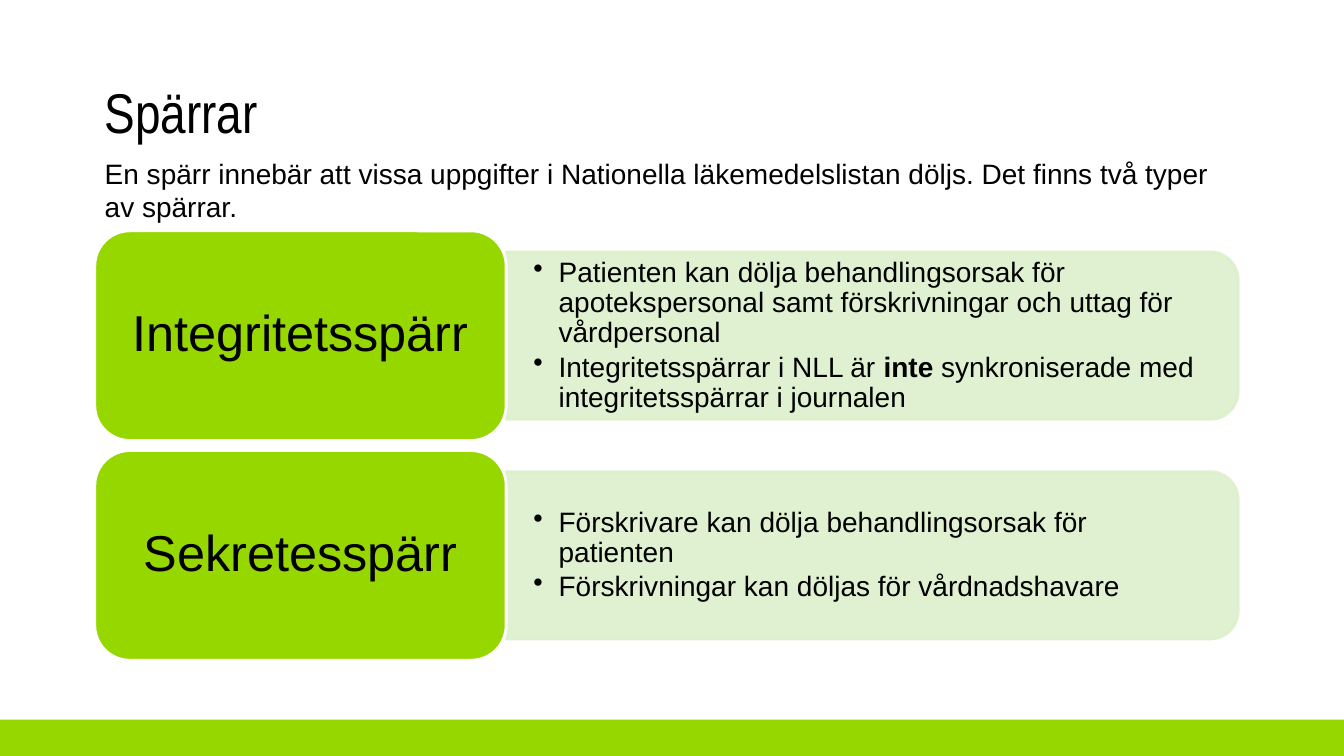
from dataclasses import dataclass

from lxml.etree import SubElement
from pptx import Presentation
from pptx.dml.color import RGBColor
from pptx.enum.shapes import MSO_SHAPE as Preset
from pptx.enum.text import MSO_ANCHOR as Anchor, PP_ALIGN as Align
from pptx.oxml.ns import qn
from pptx.util import Inches, Pt


@dataclass(frozen=True)
class Theme:
    green: RGBColor = RGBColor(0x97, 0xD7, 0x00)
    pale: RGBColor = RGBColor(0xDD, 0xF0, 0xCC)
    white: RGBColor = RGBColor(0xFF, 0xFF, 0xFF)
    black: RGBColor = RGBColor(0x00, 0x00, 0x00)
    body_font: str = "Arial"
    title_font: str = "Arial Narrow"
    title_size: int = 40
    label_size: int = 36
    body_size: int = 20


THEME = Theme()
LEFT = 0.94
LABEL_WIDTH = 4.08
LABEL_HEIGHT = 2.08
ROW_TOP = 2.29
ROW_PITCH = 2.18
PANEL_LENGTH = 7.26
PANEL_HEIGHT = 1.66
DETAIL_HEIGHT = 1.5

LOCKS = [
    ("Integritetsspärr", [
        [("Patienten kan dölja behandlingsorsak för apotekspersonal samt "
          "förskrivningar och uttag för vårdpersonal", False)],
        [("Integritetsspärrar i NLL är ", False), ("inte ", True),
         ("synkroniserade med integritetsspärrar i journalen", False)],
    ]),
    ("Sekretesspärr", [
        [("Förskrivare kan dölja behandlingsorsak för patienten", False)],
        [("Förskrivningar kan döljas för vårdnadshavare", False)],
    ]),
]


def add_bullet(paragraph):
    properties = paragraph._p.get_or_add_pPr()
    properties.set("marL", str(Inches(0.25)))
    properties.set("indent", str(Inches(-0.25)))
    SubElement(properties, qn("a:buChar"), char="•")


def write_text(shape, paragraphs, size=THEME.body_size, font=THEME.body_font,
               align=Align.LEFT, anchor=Anchor.MIDDLE, spacing=0.9, after=0,
               insets=(0.1, 0.05), bullets=False):
    frame = shape.text_frame
    frame.word_wrap = True
    frame.vertical_anchor = anchor
    frame.margin_left = frame.margin_right = Inches(insets[0])
    frame.margin_top = frame.margin_bottom = Inches(insets[1])
    for index, runs in enumerate(paragraphs):
        paragraph = frame.add_paragraph() if index else frame.paragraphs[0]
        paragraph.alignment = align
        paragraph.line_spacing = spacing
        paragraph.space_after = Pt(after)
        if bullets:
            add_bullet(paragraph)
        for text, bold in runs:
            run = paragraph.add_run()
            run.text = text
            run.font.name = font
            run.font.size = Pt(size)
            run.font.bold = bold
            run.font.color.rgb = THEME.black


def add_textbox(slide, left, top, width, height, paragraphs, **text_format):
    box = slide.shapes.add_textbox(Inches(left), Inches(top), Inches(width), Inches(height))
    write_text(box, paragraphs, **text_format)


def add_block(slide, preset, left, top, width, height, fill, line=None):
    shape = slide.shapes.add_shape(
        preset, Inches(left), Inches(top), Inches(width), Inches(height))
    shape.shadow.inherit = False
    shape.fill.solid()
    shape.fill.fore_color.rgb = fill
    if line is None:
        shape.line.fill.background()
    else:
        shape.line.color.rgb = line
        shape.line.width = Pt(2)
    return shape


def set_opacity(shape, percent):
    for color in shape._element.spPr.iter(qn("a:srgbClr")):
        SubElement(color, qn("a:alpha"), val=str(percent * 1000))


def add_lock_row(slide, top, label, details):
    panel_left = LEFT + LABEL_WIDTH
    middle = top + LABEL_HEIGHT / 2
    panel = add_block(slide, Preset.ROUND_2_SAME_RECTANGLE,
                      panel_left + (PANEL_LENGTH - PANEL_HEIGHT) / 2,
                      middle - PANEL_LENGTH / 2, PANEL_HEIGHT, PANEL_LENGTH,
                      THEME.pale, THEME.pale)
    panel.rotation = 90
    set_opacity(panel, 90)
    add_textbox(slide, panel_left, middle - DETAIL_HEIGHT / 2, 7.18, DETAIL_HEIGHT,
                details, after=3, insets=(0.27, 0.14), bullets=True)
    block = add_block(slide, Preset.ROUNDED_RECTANGLE, LEFT, top,
                      LABEL_WIDTH, LABEL_HEIGHT, THEME.green, THEME.white)
    write_text(block, [[(label, False)]], size=THEME.label_size,
               align=Align.CENTER, insets=(0.15, 0.07))


def main():
    presentation = Presentation()
    presentation.slide_width = Inches(13.33)
    presentation.slide_height = Inches(7.5)
    slide = presentation.slides.add_slide(presentation.slide_layouts[6])

    add_block(slide, Preset.RECTANGLE, 0, 7.14, 13.33, 0.36, THEME.green)
    add_textbox(slide, LEFT, 0.79, 11.44, 0.71, [[("Spärrar", False)]],
                size=THEME.title_size, font=THEME.title_font)
    for index, (label, details) in enumerate(LOCKS):
        add_lock_row(slide, ROW_TOP + index * ROW_PITCH, label, details)
    add_textbox(slide, LEFT, 1.5, 11.34, 1.45,
                [[("En spärr innebär att vissa uppgifter i Nationella läkemedelslistan "
                   "döljs. Det finns två typer av spärrar.", False)]],
                anchor=Anchor.TOP, spacing=1.0)

    presentation.save("out.pptx")


if __name__ == "__main__":
    main()
